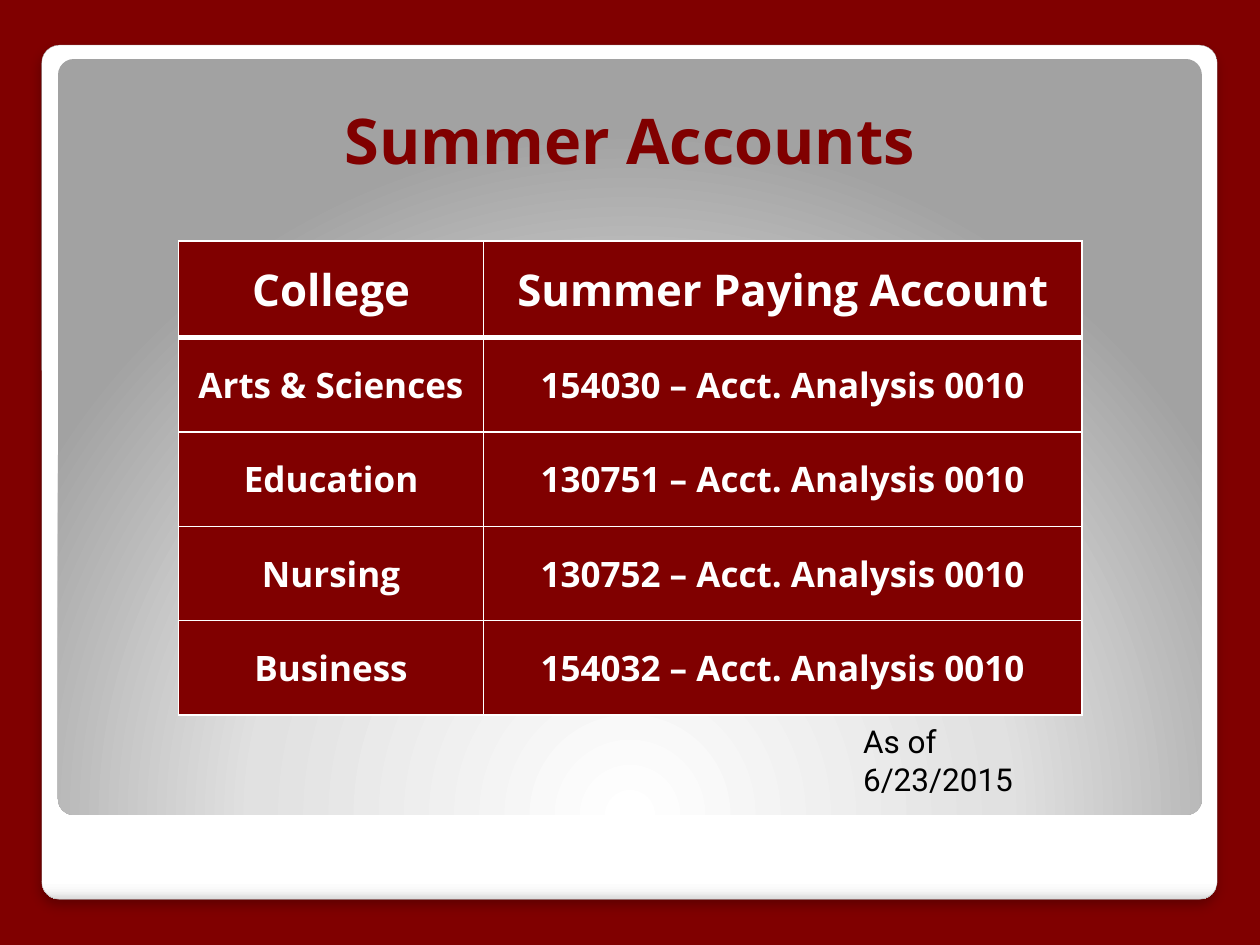
from dataclasses import dataclass

from lxml import etree
from pptx import Presentation
from pptx.dml.color import RGBColor
from pptx.enum.shapes import MSO_SHAPE
from pptx.enum.text import MSO_ANCHOR, PP_ALIGN
from pptx.oxml.ns import qn
from pptx.util import Cm, Pt

ROUNDED = MSO_SHAPE.ROUNDED_RECTANGLE
MIDDLE, TOP = MSO_ANCHOR.MIDDLE, MSO_ANCHOR.TOP
CENTER, LEFT = PP_ALIGN.CENTER, PP_ALIGN.LEFT


@dataclass(frozen=True)
class Theme:
    maroon: str = "800000"
    white: str = "FFFFFF"
    black: str = "000000"
    edge: str = "A4A4A4"
    card_stops: tuple = ((0, "FFFFFF"), (98, "FFFFFF"), (99, "F7F7F7"), (100, "DADADA"))
    panel_stops: tuple = ((0, "FFFFFF"), (55, "E1E1E1"), (100, "A2A2A2"))
    heading_font: str = "Open Sans"
    note_font: str = "Roboto"
    title_size: int = 36
    header_size: int = 25
    body_size: int = 20
    note_size: int = 18
    rule: int = 1
    header_rule: int = 3


def add_node(parent, tag, **attributes):
    values = {name: str(value) for name, value in attributes.items()}
    return etree.SubElement(parent, qn(tag), values)


class SlideBuilder:
    def __init__(self, deck, theme):
        self.theme = theme
        self.slide = deck.slides.add_slide(deck.slide_layouts[6])

    def background(self, color):
        fill = self.slide.background.fill
        fill.solid()
        fill.fore_color.rgb = RGBColor.from_string(color)

    def rounded_panel(self, left, top, width, height, stops, radial=False):
        panel = self.slide.shapes.add_shape(ROUNDED, Cm(left), Cm(top), Cm(width), Cm(height))
        panel.adjustments[0] = 0.021
        panel.line.fill.background()
        panel.shadow.inherit = False
        gradient = etree.Element(qn("a:gradFill"), rotWithShape="1")
        stop_list = add_node(gradient, "a:gsLst")
        for position, color in stops:
            stop = add_node(stop_list, "a:gs", pos=position * 1000)
            add_node(stop, "a:srgbClr", val=color)
        if radial:
            circle = add_node(gradient, "a:path", path="circle")
            add_node(circle, "a:fillToRect", l=50000, t=175000, r=50000, b=-75000)
        else:
            add_node(gradient, "a:lin", ang=5400000, scaled=0)
        panel._element.spPr.find(qn("a:prstGeom")).addnext(gradient)
        return panel

    def outline(self, shape, color, width):
        shape.line.color.rgb = RGBColor.from_string(color)
        shape.line.width = Pt(width)

    def drop_shadow(self, shape, color, alpha, blur, distance):
        effects = shape._element.spPr.find(qn("a:effectLst"))
        shadow = add_node(effects, "a:outerShdw", blurRad=Pt(blur), dist=Pt(distance),
                          dir=5400000, algn="t", rotWithShape=0)
        node = add_node(shadow, "a:srgbClr", val=color)
        add_node(node, "a:alpha", val=alpha * 1000)

    def set_text(self, frame, text, font, size, color, bold=False, align=LEFT):
        frame.text = text
        para = frame.paragraphs[0]
        para.alignment = align
        for span in para.runs:
            span.font.name = font
            span.font.size = Pt(size)
            span.font.bold = bold
            span.font.color.rgb = RGBColor.from_string(color)

    def text_box(self, left, top, width, height, text, anchor=TOP, **style):
        box = self.slide.shapes.add_textbox(Cm(left), Cm(top), Cm(width), Cm(height))
        box.text_frame.word_wrap = True
        box.text_frame.vertical_anchor = anchor
        self.set_text(box.text_frame, text, **style)

    def borders(self, cell, top, bottom):
        properties = cell._tc.get_or_add_tcPr()
        sides = (("L", self.theme.rule), ("R", self.theme.rule), ("T", top), ("B", bottom))
        for index, (side, width) in enumerate(sides):
            line = add_node(properties, f"a:ln{side}", w=Pt(width))
            add_node(add_node(line, "a:solidFill"), "a:srgbClr", val=self.theme.white)
            properties.insert(index, line)

    def table(self, left, top, column_widths, row_heights, rows):
        theme = self.theme
        table = self.slide.shapes.add_table(
            len(rows), len(column_widths), Cm(left), Cm(top),
            Cm(sum(column_widths)), Cm(sum(row_heights))).table
        for column, width in zip(table.columns, column_widths):
            column.width = Cm(width)
        for index, (row, height, texts) in enumerate(zip(table.rows, row_heights, rows)):
            row.height = Cm(height)
            size = theme.header_size if index == 0 else theme.body_size
            upper = theme.header_rule if index == 1 else theme.rule
            lower = theme.header_rule if index == 0 else theme.rule
            for cell, text in zip(row.cells, texts):
                cell.fill.solid()
                cell.fill.fore_color.rgb = RGBColor.from_string(theme.maroon)
                cell.vertical_anchor = MIDDLE
                self.set_text(cell.text_frame, text, theme.heading_font, size,
                              theme.white, bold=True, align=CENTER)
                self.borders(cell, upper, lower)


def main():
    theme = Theme()
    deck = Presentation()
    deck.slide_width, deck.slide_height = Cm(25.4), Cm(19.05)
    page = SlideBuilder(deck, theme)
    page.background(theme.maroon)

    card = page.rounded_panel(0.84, 0.91, 23.7, 17.22, theme.card_stops)
    page.outline(card, theme.edge, 0.16)
    page.drop_shadow(card, theme.black, alpha=25, blur=6, distance=4)
    page.rounded_panel(1.17, 1.19, 23.06, 15.24, theme.panel_stops, radial=True)

    page.text_box(0, 1.9, 25.4, 1.8, "Summer Accounts", anchor=MIDDLE, font=theme.heading_font,
                  size=theme.title_size, color=theme.maroon, bold=True, align=CENTER)

    accounts = {"Arts & Sciences": 154030, "Education": 130751,
                "Nursing": 130752, "Business": 154032}
    rows = [("College", "Summer Paying Account")]
    rows += [(college, f"{account} – Acct. Analysis 0010")
             for college, account in accounts.items()]
    page.table(3.6, 4.86, (6.15, 12.06), (1.95,) + (1.9,) * len(accounts), rows)

    page.text_box(17.15, 14.43, 5.08, 1.02, "As of 6/23/2015", font=theme.note_font,
                  size=theme.note_size, color=theme.black)
    deck.save("out.pptx")


if __name__ == "__main__":
    main()
